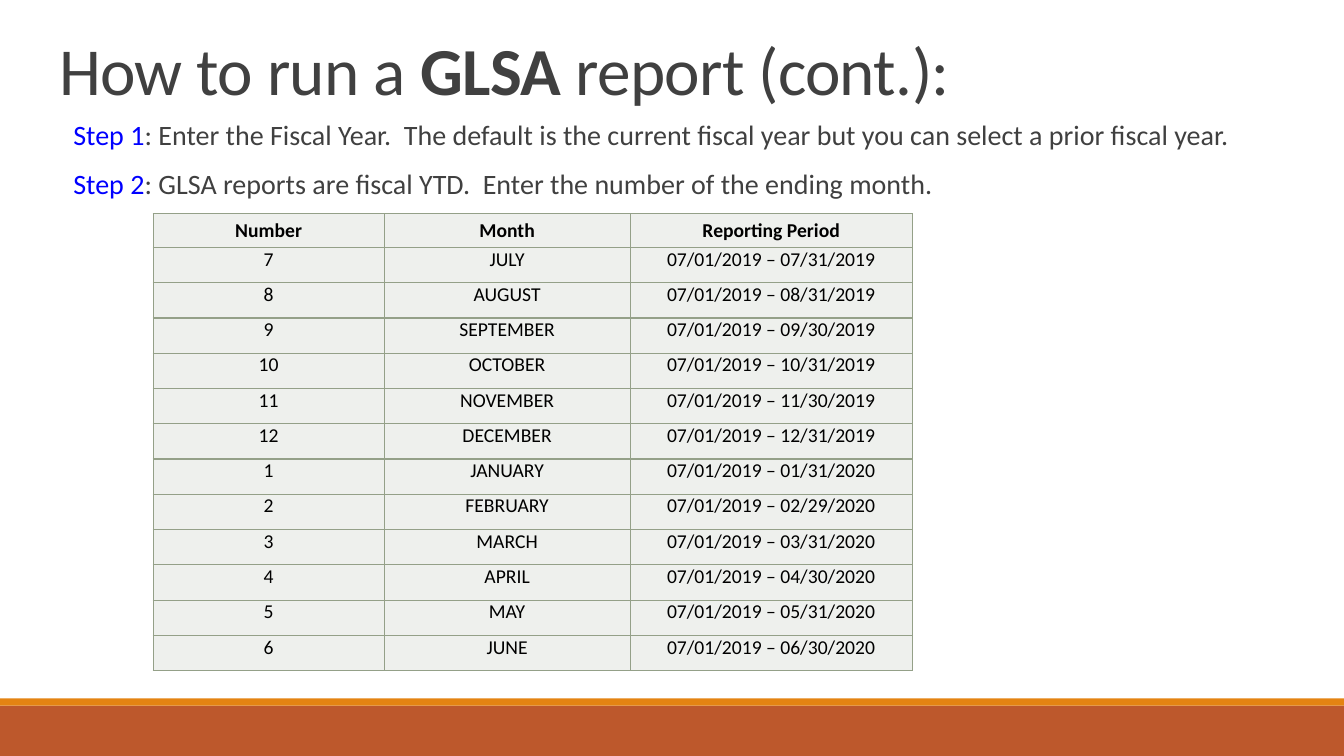
from lxml import etree
from pptx import Presentation
from pptx.dml.color import RGBColor
from pptx.enum.shapes import MSO_SHAPE
from pptx.enum.text import MSO_ANCHOR, PP_ALIGN
from pptx.oxml.ns import qn
from pptx.util import Inches, Pt

RECTANGLE = MSO_SHAPE.RECTANGLE
TOP, MIDDLE = MSO_ANCHOR.TOP, MSO_ANCHOR.MIDDLE
CENTER = PP_ALIGN.CENTER
FONT = "Calibri"
COLORS = {
    "rust": "BD582C",
    "orange": "E48312",
    "gray": "404040",
    "blue": "0000FF",
    "black": "000000",
    "cell": "EEF0ED",
    "border": "94A088",
}
TITLE = [("How to run a ", False), ("GLSA ", True), ("report (cont.):", False)]
STEPS = [
    ("Step 1", ": Enter the Fiscal Year.  The default is the current fiscal year but you can select a prior fiscal year."),
    ("Step 2", ": GLSA reports are fiscal YTD.  Enter the number of the ending month."),
]
HEADERS = ("Number", "Month", "Reporting Period")
MONTHS = [
    ("7", "JULY", "07/31/2019"),
    ("8", "AUGUST", "08/31/2019"),
    ("9", "SEPTEMBER", "09/30/2019"),
    ("10", "OCTOBER", "10/31/2019"),
    ("11", "NOVEMBER", "11/30/2019"),
    ("12", "DECEMBER", "12/31/2019"),
    ("1", "JANUARY", "01/31/2020"),
    ("2", "FEBRUARY", "02/29/2020"),
    ("3", "MARCH", "03/31/2020"),
    ("4", "APRIL", "04/30/2020"),
    ("5", "MAY", "05/31/2020"),
    ("6", "JUNE", "06/30/2020"),
]
COLUMN_WIDTHS = (2.29, 2.44, 2.8)
HEADER_HEIGHT, ROW_HEIGHT = 0.29, 0.35


class SlideBuilder:
    """Holds the style and current slide, and adds each kind of element."""

    def __init__(self, slide):
        self.slide = slide

    def color(self, name):
        return RGBColor.from_string(COLORS[name])

    def bar(self, top, height, color):
        shape = self.slide.shapes.add_shape(
            RECTANGLE, 0, Inches(top), Inches(13.33), Inches(height))
        shape.shadow.inherit = False
        shape.fill.solid()
        shape.fill.fore_color.rgb = self.color(color)
        shape.line.fill.background()

    def text_frame(self, top, height, anchor):
        shape = self.slide.shapes.add_textbox(
            Inches(0.49), Inches(top), Inches(12.28), Inches(height))
        frame = shape.text_frame
        frame.word_wrap = True
        frame.vertical_anchor = anchor
        return frame

    def run(self, paragraph, text, size, color, bold=False):
        run = paragraph.add_run()
        run.text = text
        run.font.name = FONT
        run.font.size = Pt(size)
        run.font.bold = bold
        run.font.color.rgb = self.color(color)
        return run

    def title(self, parts):
        paragraph = self.text_frame(0.31, 0.86, MIDDLE).paragraphs[0]
        paragraph.line_spacing = 0.85
        for text, bold in parts:
            run = self.run(paragraph, text, 48, "gray", bold)
            run.font._element.set("spc", "-50")

    def steps(self, steps):
        frame = self.text_frame(1.15, 5.14, TOP)
        for index, (label, text) in enumerate(steps):
            paragraph = frame.add_paragraph() if index else frame.paragraphs[0]
            paragraph.line_spacing = 0.9
            paragraph.space_before = Pt(12)
            paragraph.space_after = Pt(2)
            properties = paragraph._p.get_or_add_pPr()
            properties.set("marL", str(Inches(0.1)))
            properties.set("indent", str(Inches(-0.1)))
            bullet_color = etree.SubElement(properties, qn("a:buClr"))
            etree.SubElement(bullet_color, qn("a:srgbClr"), val=COLORS["orange"])
            etree.SubElement(properties, qn("a:buChar"), char=" ")
            self.run(paragraph, label, 20, "blue")
            self.run(paragraph, text, 20, "gray")

    def cell(self, cell, text, header):
        properties = cell._tc.get_or_add_tcPr()
        for side in ("lnL", "lnR", "lnT", "lnB"):
            line = etree.SubElement(properties, qn(f"a:{side}"), w=str(Pt(1)))
            fill = etree.SubElement(line, qn("a:solidFill"))
            etree.SubElement(fill, qn("a:srgbClr"), val=COLORS["border"])
        cell.fill.solid()
        cell.fill.fore_color.rgb = self.color("cell")
        if not header:
            cell.margin_top = cell.margin_bottom = 0
        paragraph = cell.text_frame.paragraphs[0]
        paragraph.alignment = CENTER
        self.run(paragraph, text, 14, "black", header)

    def table(self, rows):
        height = HEADER_HEIGHT + ROW_HEIGHT * (len(rows) - 1)
        table = self.slide.shapes.add_table(
            len(rows), len(COLUMN_WIDTHS), Inches(1.52), Inches(2.12),
            Inches(sum(COLUMN_WIDTHS)), Inches(height)).table
        for column, width in zip(table.columns, COLUMN_WIDTHS):
            column.width = Inches(width)
        for index, values in enumerate(rows):
            header = index == 0
            table.rows[index].height = Inches(HEADER_HEIGHT if header else ROW_HEIGHT)
            for cell, text in zip(table.rows[index].cells, values):
                self.cell(cell, text, header)


def main():
    presentation = Presentation()
    presentation.slide_width = Inches(13.33)
    presentation.slide_height = Inches(7.5)
    builder = SlideBuilder(presentation.slides.add_slide(presentation.slide_layouts[6]))
    builder.bar(7, 0.5, "rust")
    builder.bar(6.93, 0.07, "orange")
    builder.title(TITLE)
    builder.steps(STEPS)
    periods = [(number, month, f"07/01/2019 – {end}") for number, month, end in MONTHS]
    builder.table([HEADERS] + periods)
    presentation.save("out.pptx")


if __name__ == "__main__":
    main()
